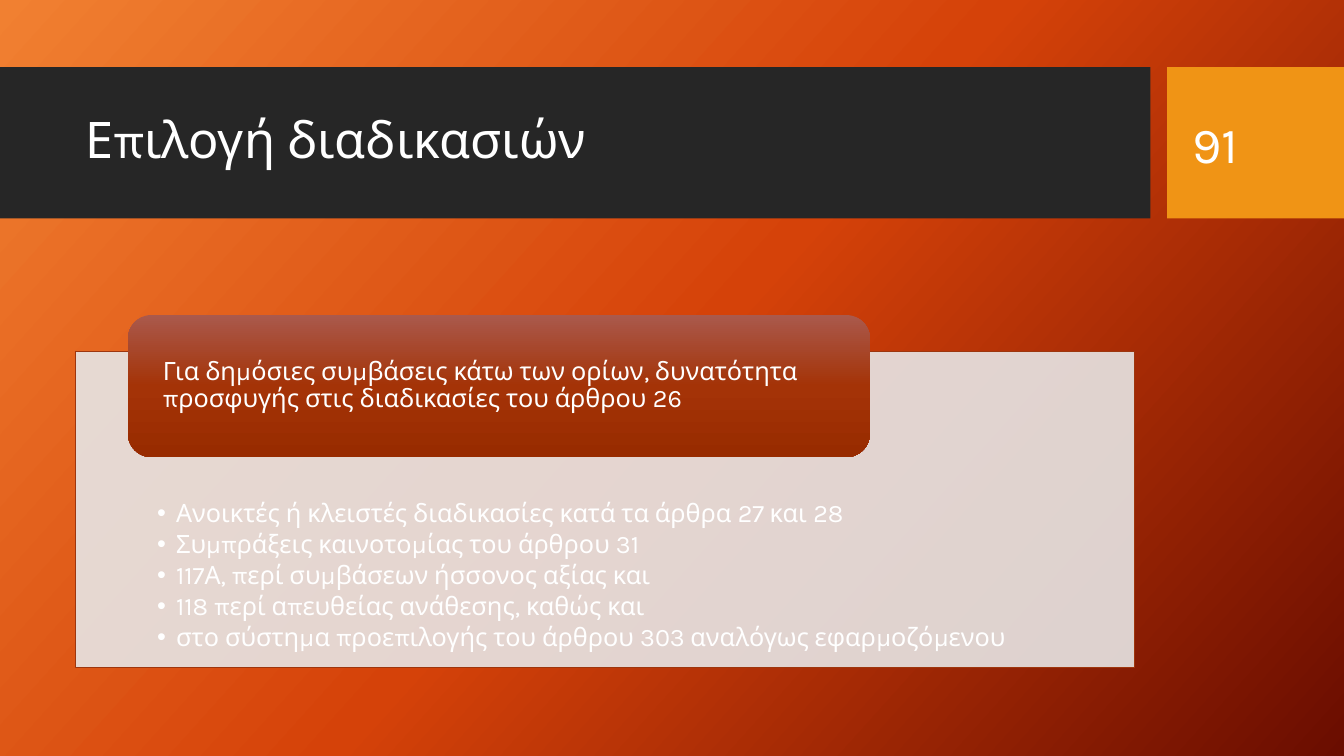
"""Build the slide on choosing procurement procedures."""
import copy
from dataclasses import dataclass

import lxml.etree
import pptx
import pptx.dml.color
import pptx.enum.shapes
import pptx.enum.text
import pptx.oxml.ns
import pptx.util

Pt = pptx.util.Pt
RGB = pptx.dml.color.RGBColor.from_string
ANCHOR = pptx.enum.text.MSO_ANCHOR
SHAPE = pptx.enum.shapes.MSO_SHAPE
qn = pptx.oxml.ns.qn


@dataclass(frozen=True)
class Theme:
    font: str = "Karla"
    text: str = "FFFFFF"
    bar: str = "262626"
    number: str = "F09415"
    panel: str = "E7E6E6"
    panel_line: str = "9D360E"
    background: tuple = ("F18031", "D54209", "6A0D00")
    heading: tuple = ("AA594C", "A43307", "982B00")
    large: float = 36
    body: float = 18


theme = Theme()


def set_gradient(fill, element, colors, angle):
    fill.gradient()
    fill.gradient_angle = angle
    first = element.find(".//" + qn("a:gsLst"))[0]
    first.addnext(copy.deepcopy(first))
    for stop, color, position in zip(fill.gradient_stops, colors, (0, 0.5, 1)):
        stop.color.rgb = RGB(color)
        stop.position = position


def write(sp, lines, size, anchor, margins, spacing=0.9, after=0):
    tf = sp.text_frame
    tf.text = "\n".join(lines)
    tf.word_wrap = True
    tf.auto_size = pptx.enum.text.MSO_AUTO_SIZE.NONE
    tf.vertical_anchor = anchor
    tf.margin_left, tf.margin_top, tf.margin_right, tf.margin_bottom = map(Pt, margins)
    for p in tf.paragraphs:
        p.alignment = pptx.enum.text.PP_ALIGN.LEFT
        p.line_spacing = spacing
        p.space_before = Pt(0)
        p.space_after = Pt(after)
        for r in p.runs:
            r.font.name = theme.font
            r.font.size = Pt(size)
            r.font.color.rgb = RGB(theme.text)


prs = pptx.Presentation()
prs.slide_width, prs.slide_height = Pt(960), Pt(540)
s = prs.slides.add_slide(prs.slide_layouts[1])
set_gradient(s.background.fill, s.element, theme.background, 318)

rectangles = []
for left, top, width, height, color in (
    (0, 48, 821.8, 108, theme.bar),
    (833.6, 48, 126.4, 108, theme.number),
    (53.6, 251.3, 756.7, 225.4, theme.panel),
):
    sp = s.shapes.add_shape(SHAPE.RECTANGLE, Pt(left), Pt(top), Pt(width), Pt(height))
    sp.shadow.inherit = False
    sp.fill.solid()
    sp.fill.fore_color.rgb = RGB(color)
    sp.line.fill.background()
    rectangles.append(sp)
title_bar, number_bar, panel = rectangles

panel_color = panel.element.spPr.find(".//" + qn("a:srgbClr"))
lxml.etree.SubElement(panel_color, qn("a:alpha"), val="90000")
panel.line.color.rgb = RGB(theme.panel_line)
panel.line.width = Pt(0.75)

title = s.shapes.title
title.left, title.top, title.width, title.height = Pt(53.6), Pt(59), Pt(756.7), Pt(85)
write(title, ["Επιλογή διαδικασιών"], theme.large, ANCHOR.MIDDLE, (7.2, 3.6, 7.2, 3.6))
title_bar.element.addnext(title.element)

number = s.shapes.add_textbox(Pt(844.8), Pt(59.3), Pt(90.7), Pt(85.7))
write(number, ["91"], theme.large, ANCHOR.MIDDLE, (7.2, 3.6, 7.2, 3.6), spacing=1)

body = s.placeholders[1]
body.left, body.top, body.width, body.height = Pt(112.3), Pt(357.9), Pt(638.7), Pt(118.8)
procedures = [
    "Ανοικτές ή κλειστές διαδικασίες κατά τα άρθρα 27 και 28",
    "Συμπράξεις καινοτομίας του άρθρου 31",
    "117Α, περί συμβάσεων ήσσονος αξίας και",
    "118 περί απευθείας ανάθεσης, καθώς και",
    "στο σύστημα προεπιλογής του άρθρου 303 αναλόγως εφαρμοζόμενου",
]
write(body, procedures, theme.body, ANCHOR.TOP, (0, 0, 0, 0), after=2.7)
for p in body.text_frame.paragraphs:
    pPr = p._p.get_or_add_pPr()
    pPr.set("marL", str(Pt(13.5)))
    pPr.set("indent", str(-Pt(13.5)))
    lxml.etree.SubElement(pPr, qn("a:buChar"), char="•")
panel.element.addnext(body.element)

heading = s.shapes.add_shape(SHAPE.ROUNDED_RECTANGLE, Pt(91.4), Pt(225), Pt(530), Pt(101.5))
heading.shadow.inherit = False
set_gradient(heading.fill, heading.element, theme.heading, 270)
heading.line.fill.background()
write(
    heading,
    ["Για δημόσιες συμβάσεις κάτω των ορίων, δυνατότητα προσφυγής στις διαδικασίες του άρθρου 26"],
    theme.body, ANCHOR.MIDDLE, (20, 0, 20, 0), after=6.3,
)

prs.save("out.pptx")
